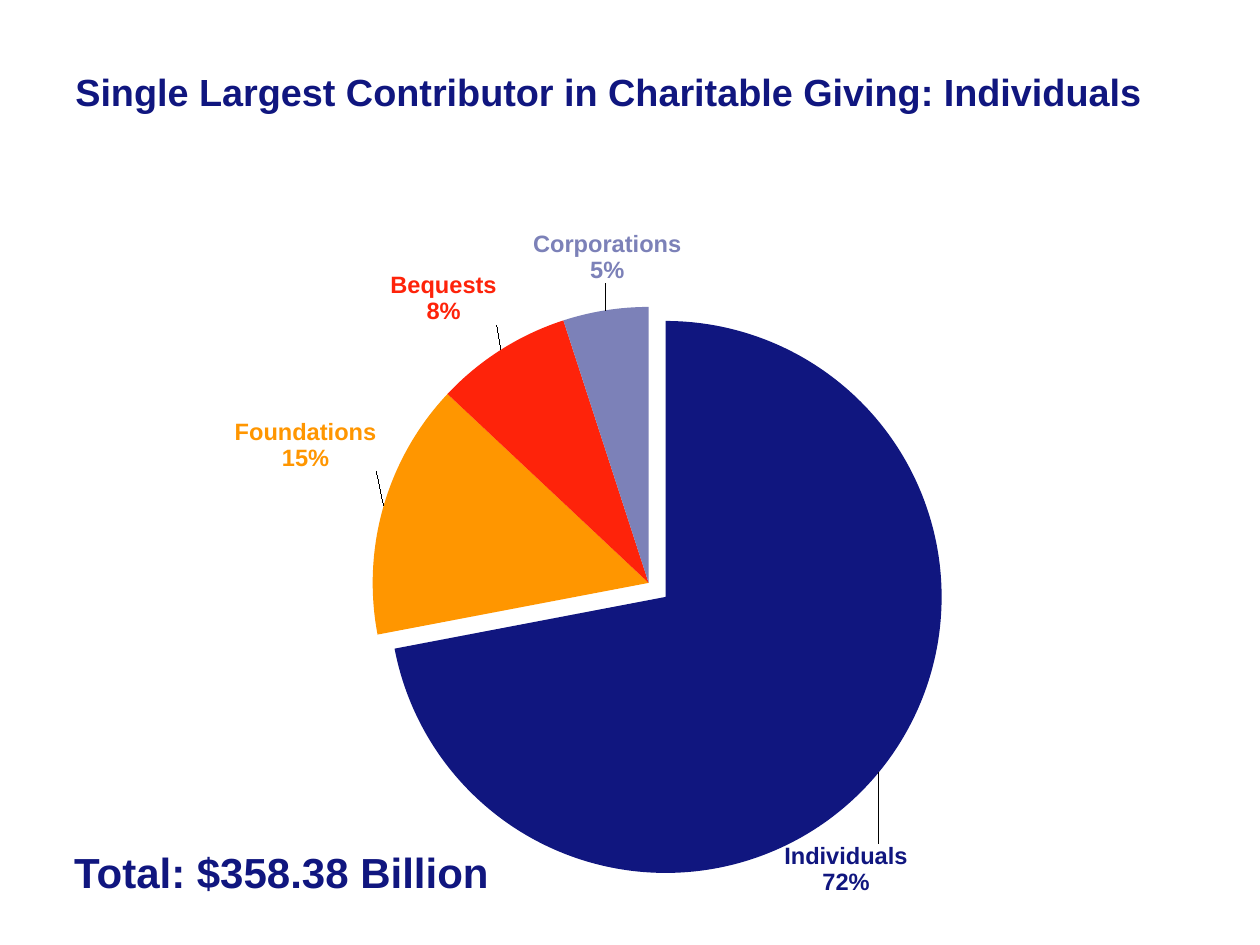
from lxml.etree import SubElement
from pptx import Presentation
from pptx.chart.data import CategoryChartData
from pptx.dml.color import RGBColor
from pptx.enum.chart import XL_CHART_TYPE, XL_LABEL_POSITION
from pptx.enum.text import MSO_ANCHOR
from pptx.oxml import parse_xml
from pptx.oxml.ns import nsdecls, qn
from pptx.util import Inches, Pt

WIDE, HIGH = 10, 7.5
NAVY, GREY = "10167F", "B3B3B3"
SLICES = [
    ("Individuals", 72, NAVY, (-0.088, 0.096)),
    ("Foundations", 15, "FF9600", (0, -0.047)),
    ("Bequests", 8, "FE230A", (0, -0.027)),
    ("Corporations", 5, "7C81B8", (0.068, -0.028)),
]
PLOT = {"x": 0.273, "y": 0.127, "w": 0.487, "h": 0.808}


def paint(item, code):
    item.rgb = RGBColor.from_string(code)


def style(font, size, code):
    font.name = "Arial"
    font.size = Pt(size)
    font.bold = True
    paint(font.color, code)


def place(x, y, w, h):
    return (Inches(x * WIDE), Inches(y * HIGH),
            Inches(w * WIDE), Inches(h * HIGH))


def add_text(slide, area, words, size, anchor):
    frame = slide.shapes.add_textbox(*place(*area)).text_frame
    frame.word_wrap = True
    frame.vertical_anchor = anchor
    run = frame.paragraphs[0].add_run()
    run.text = words
    style(run.font, size, NAVY)


def layout(modes, spots):
    tags = "".join(f'<c:{k} val="{v}"/>' for k, v in (modes | spots).items())
    return parse_xml(f'<c:layout {nsdecls("c")}><c:manualLayout>{tags}'
                     '</c:manualLayout></c:layout>')


def show(labels):
    style(labels.font, 13.5, GREY)
    labels.show_percentage = True
    labels.show_category_name = True
    labels.show_value = False
    labels.number_format = "0%"
    labels.number_format_is_linked = False
    labels.position = XL_LABEL_POSITION.OUTSIDE_END


def tune(tag, shift):
    tag.find(qn("c:idx")).addnext(layout({}, dict(zip("xy", shift))))
    flags = {"showVal": 0, "showCatName": 1, "showPercent": 1}
    for name, flag in flags.items():
        tag.find(qn(f"c:{name}")).set("val", str(flag))
    SubElement(tag, qn("c:separator")).text = "\n"


def add_pie(slide, area):
    data = CategoryChartData(number_format="0")
    data.categories = [name for name, *_ in SLICES]
    data.add_series("Series 1", [value for _, value, *_ in SLICES])
    chart = slide.shapes.add_chart(
        XL_CHART_TYPE.PIE, *place(*area), data).chart
    chart.has_legend = False
    chart.has_title = False
    chart.font.name = "Arial"
    chart.font.size = Pt(10)
    paint(chart.font.color, "000000")
    plot = chart.plots[0]
    plot.vary_by_categories = True
    pie = plot.series[0]
    labels = pie.data_labels
    show(labels)
    for i, (_, _, code, shift) in enumerate(SLICES):
        point = pie.points[i]
        point.format.fill.solid()
        paint(point.format.fill.fore_color, code)
        point.format.line.fill.background()
        label = point.data_label
        style(label.font, 13.5, code)
        label.position = XL_LABEL_POSITION.OUTSIDE_END
        tune(labels._element.findall(qn("c:dLbl"))[i], shift)
    lead = labels._element.find(qn("c:showLeaderLines"))
    if lead is None:
        lead = SubElement(labels._element, qn("c:showLeaderLines"))
    lead.set("val", "1")
    burst = parse_xml(f'<c:explosion {nsdecls("c")} val="8"/>')
    first = pie._element.find(qn("c:dPt"))
    first.find(qn("c:spPr")).addprevious(burst)
    zone = chart._chartSpace.chart.plotArea
    for old in zone.findall(qn("c:layout")):
        zone.remove(old)
    modes = {"layoutTarget": "inner", "xMode": "edge", "yMode": "edge"}
    zone.insert(0, layout(modes, PLOT))


def main():
    deck = Presentation()
    deck.slide_width, deck.slide_height = Inches(WIDE), Inches(HIGH)
    slide = deck.slides.add_slide(deck.slide_layouts[6])
    add_pie(slide, (0.05, 0.233, 0.9, 0.723))
    add_text(slide, (0.05, 0.055, 0.9, 0.083),
             "Single Largest Contributor in Charitable Giving: Individuals",
             21.6, MSO_ANCHOR.MIDDLE)
    add_text(slide, (0.049, 0.889, 0.567, 0.067),
             "Total: $358.38 Billion", 24, MSO_ANCHOR.TOP)
    deck.save("out.pptx")


if __name__ == "__main__":
    main()
